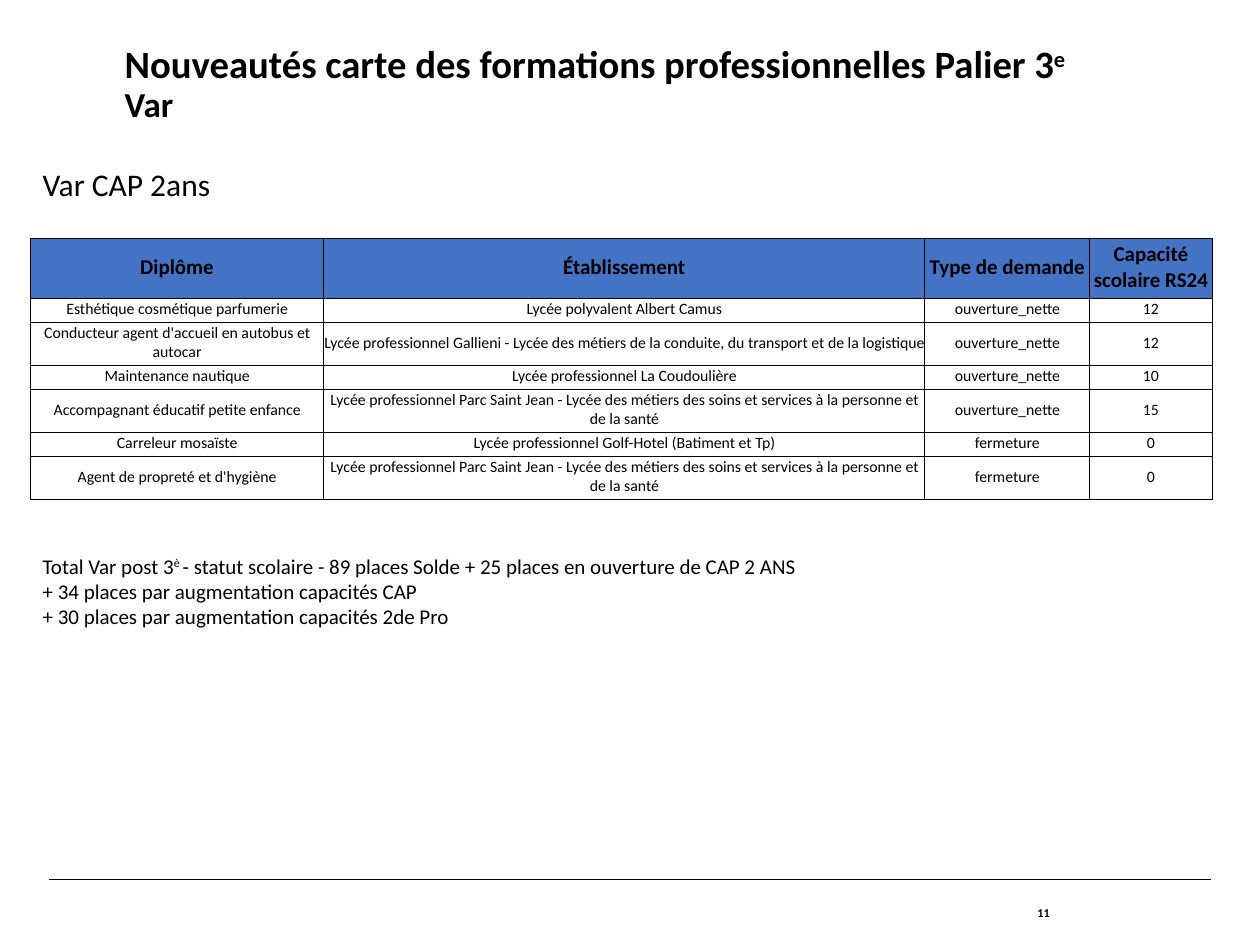
from dataclasses import dataclass

from lxml.etree import SubElement
from pptx import Presentation
from pptx.dml.color import RGBColor
from pptx.enum.shapes import MSO_CONNECTOR
from pptx.enum.text import MSO_ANCHOR, PP_ALIGN
from pptx.oxml.ns import qn
from pptx.util import Inches, Pt


@dataclass(frozen=True)
class Theme:
    font: str = "Calibri"
    ink: RGBColor = RGBColor(0x00, 0x00, 0x00)
    header_fill: RGBColor = RGBColor(0x44, 0x72, 0xC4)
    title: float = 22.1
    subtitle: float = 20
    heading: float = 18
    body: float = 12
    cell: float = 9
    page_number: float = 6.9
    rule_width: float = 0.8
    border_width: float = 0.5


class SlideBuilder:
    def __init__(self, slide, theme):
        self.slide = slide
        self.theme = theme

    def add_run(self, paragraph, text, size, bold=False, raised=False):
        run = paragraph.add_run()
        run.text = text
        font = run.font
        font.name, font.size, font.bold = self.theme.font, Pt(size), bold
        font.color.rgb = self.theme.ink
        if raised:
            font._element.set("baseline", "30000")

    def text(self, box, lines, margins=(0, 0), anchor=MSO_ANCHOR.TOP,
             align=PP_ALIGN.LEFT, spacing=None, wrap=True):
        """Each line is a list of runs: (text, size, bold, raised)."""
        shape = self.slide.shapes.add_textbox(*map(Inches, box))
        frame = shape.text_frame
        frame.word_wrap = wrap
        frame.vertical_anchor = anchor
        frame.margin_left = frame.margin_right = Inches(margins[0])
        frame.margin_top = frame.margin_bottom = Inches(margins[1])
        for index, runs in enumerate(lines):
            paragraph = frame.add_paragraph() if index else frame.paragraphs[0]
            paragraph.alignment = align
            paragraph.line_spacing = spacing
            for run in runs:
                self.add_run(paragraph, *run)

    def line(self, left, top, right, bottom):
        connector = self.slide.shapes.add_connector(
            MSO_CONNECTOR.STRAIGHT, *map(Inches, (left, top, right, bottom)))
        connector.line.color.rgb = self.theme.ink
        connector.line.width = Pt(self.theme.rule_width)
        SubElement(connector._element.spPr, qn("a:effectLst"))

    def border(self, cell):
        properties = cell._tc.get_or_add_tcPr()
        for side in ("lnL", "lnR", "lnT", "lnB"):
            line = SubElement(properties, qn(f"a:{side}"),
                              w=str(Pt(self.theme.border_width)))
            fill = SubElement(line, qn("a:solidFill"))
            SubElement(fill, qn("a:srgbClr"), val=str(self.theme.ink))

    def table(self, left, top, widths, heights, rows):
        box = (left, top, sum(widths), sum(heights))
        table = self.slide.shapes.add_table(
            len(rows), len(widths), *map(Inches, box)).table
        for column, width in zip(table.columns, widths):
            column.width = Inches(width)
        for row, height, values in zip(table.rows, heights, rows):
            row.height = Inches(height)
            is_header = values is rows[0]
            for cell, value in zip(row.cells, values):
                self.cell(cell, value, is_header)

    def cell(self, cell, value, is_header):
        cell.margin_left = cell.margin_right = 0
        cell.margin_top, cell.margin_bottom = Inches(0.01), Inches(0.03)
        cell.vertical_anchor = MSO_ANCHOR.MIDDLE
        self.border(cell)
        if is_header:
            cell.fill.solid()
            cell.fill.fore_color.rgb = self.theme.header_fill
        else:
            cell.fill.background()
        paragraph = cell.text_frame.paragraphs[0]
        paragraph.alignment = PP_ALIGN.CENTER
        size = self.theme.body if is_header else self.theme.cell
        self.add_run(paragraph, value, size, is_header)


PARC_SAINT_JEAN = ("Lycée professionnel Parc Saint Jean - Lycée des métiers "
                   "des soins et services à la personne et de la santé")
GALLIENI = ("Lycée professionnel Gallieni - Lycée des métiers de la conduite, "
            "du transport et de la logistique")
OPENING, CLOSING = "ouverture_nette", "fermeture"
COURSES = [
    ("Diplôme", "Établissement", "Type de demande", "Capacité scolaire RS24"),
    ("Esthétique cosmétique parfumerie", "Lycée polyvalent Albert Camus",
     OPENING, "12"),
    ("Conducteur agent d'accueil en autobus et autocar", GALLIENI,
     OPENING, "12"),
    ("Maintenance nautique", "Lycée professionnel La Coudoulière",
     OPENING, "10"),
    ("Accompagnant éducatif petite enfance", PARC_SAINT_JEAN, OPENING, "15"),
    ("Carreleur mosaïste", "Lycée professionnel Golf-Hotel (Batiment et Tp)",
     CLOSING, "0"),
    ("Agent de propreté et d'hygiène", PARC_SAINT_JEAN, CLOSING, "0"),
]


def main():
    presentation = Presentation()
    presentation.slide_width, presentation.slide_height = Inches(10), Inches(7.5)
    slide = presentation.slides.add_slide(presentation.slide_layouts[6])
    theme = Theme()
    builder = SlideBuilder(slide, theme)
    left = 0.24
    body_margins = (0.1, 0.05)

    # Footer rule and page number
    builder.line(0.39, 6.98, 9.61, 6.98)
    builder.text((6.85, 6.98, 1.48, 0.52), [[("11", theme.page_number, True)]],
                 anchor=MSO_ANCHOR.MIDDLE, align=PP_ALIGN.RIGHT)

    # Title and heading
    builder.text((0.99, 0.36, 9.17, 0.69), [
        [("Nouveautés carte des formations professionnelles Palier 3",
          theme.title, True), ("e", theme.title, True, True)],
        [("Var", theme.subtitle, True)],
    ], spacing=0.9)
    builder.text((left, 1.26, 1.85, 0.4), [[("Var CAP 2ans", theme.heading)]],
                 margins=body_margins, wrap=False)

    # Course table: single-line and two-line rows alternate
    builder.table(left, 1.89, (2.33, 4.77, 1.31, 0.97),
                  (0.48,) + (0.18, 0.34) * 3, COURSES)

    # Totals
    builder.text((left, 4.34, 9.42, 0.91), [
        [("Total Var post 3", theme.body), ("è ", theme.body, False, True),
         ("- statut scolaire - 89 places Solde + 25 places en ouverture "
          "de CAP 2 ANS", theme.body)],
        [("+ 34 places par augmentation capacités CAP", theme.body)],
        [("+ 30 places par augmentation capacités 2de Pro", theme.body)],
    ], margins=body_margins)

    presentation.save("out.pptx")


if __name__ == "__main__":
    main()
